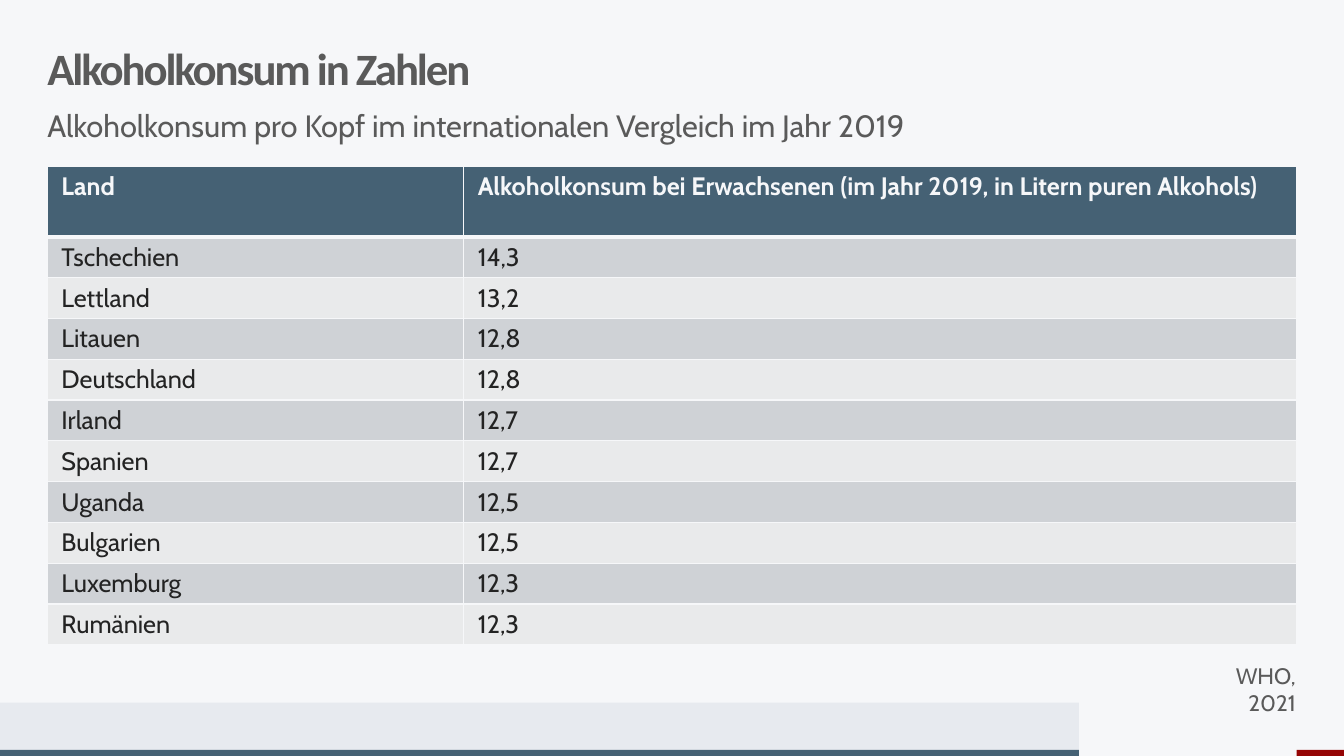
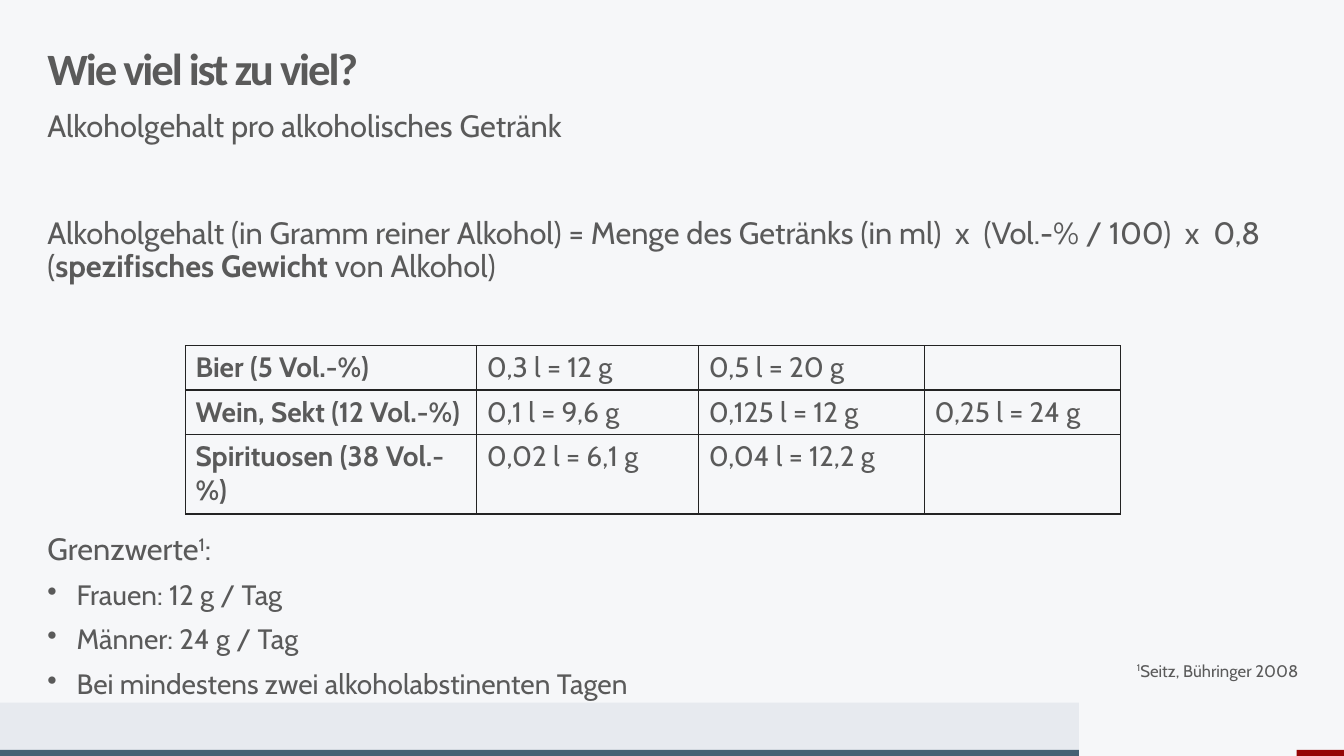
import dataclasses

import lxml.etree
import pptx
import pptx.dml.color
import pptx.enum.shapes
import pptx.enum.text
import pptx.oxml.ns
import pptx.util

Inches = pptx.util.Inches
Pt = pptx.util.Pt
ALIGN = pptx.enum.text.PP_ALIGN
ANCHOR = pptx.enum.text.MSO_ANCHOR


@dataclasses.dataclass(frozen=True)
class Theme:
    paper: str = "F6F7F9"
    band: str = "E7EAEF"
    blue: str = "456174"
    red: str = "950505"
    text: str = "5A5A5A"
    ink: str = "232323"
    row_dark: str = "CFD2D6"
    row_light: str = "E9EAEB"
    title_font: str = "Calibri"
    body_font: str = "Cabin"
    title_size: float = 32
    body_size: float = 22
    list_size: float = 20
    table_size: float = 18
    source_size: float = 16
    note_size: float = 12
    tight: float = 0.9
    space: float = 10


@dataclasses.dataclass(frozen=True)
class Box:
    left: float
    top: float
    width: float
    height: float

    def lengths(self):
        return [Inches(value) for value in dataclasses.astuple(self)]


@dataclasses.dataclass(frozen=True)
class Span:
    text: str
    bold: bool = False
    raised: bool = False


THEME = Theme()
MARGIN = 0.47
PAGE_WIDTH, PAGE_HEIGHT = 13.33, 7.5
CONTENT_WIDTH = PAGE_WIDTH - 2 * MARGIN


def rgb(colour):
    return pptx.dml.color.RGBColor.from_string(colour)


def add_span(para, span, size, colour=THEME.text, font=THEME.body_font):
    run = para.add_run()
    run.text = span.text
    run.font.name = font
    run.font.size = Pt(size)
    run.font.bold = span.bold
    run.font.color.rgb = rgb(colour)
    if span.raised:
        run.font._element.set("baseline", "30000")
    return run


def add_bullet(para, indent=0.29):
    properties = para._p.get_or_add_pPr()
    properties.set("marL", str(Inches(indent)))
    properties.set("indent", str(-Inches(indent)))
    bullet = lxml.etree.SubElement(properties, pptx.oxml.ns.qn("a:buChar"))
    bullet.set("char", "•")


def add_frame(page, box, inset=0, anchor=ANCHOR.TOP):
    frame = page.shapes.add_textbox(*box.lengths()).text_frame
    frame.word_wrap = True
    frame.vertical_anchor = anchor
    frame.margin_left = frame.margin_right = Inches(inset)
    frame.margin_top = frame.margin_bottom = Inches(inset / 2)
    return frame


def add_body_text(page, box, spans):
    frame = add_frame(page, box)
    para = frame.paragraphs[0]
    para.line_spacing = THEME.tight
    for span in spans:
        add_span(para, span, THEME.body_size)
    return frame


def add_source(page, box, spans, size, inset=0):
    para = add_frame(page, box, inset).paragraphs[0]
    para.alignment = ALIGN.RIGHT
    for span in spans:
        add_span(para, span, size)


def add_footer(page, box):
    """Draw the pale band and the two strips along the bottom of the box."""
    band_width, strip = 10.7, 0.06
    strip_top = box.top + box.height - strip
    parts = [
        (Box(box.left, box.top, band_width, box.height - strip), THEME.band),
        (Box(box.left, strip_top, band_width, strip), THEME.blue),
        (Box(box.left + box.width - MARGIN, strip_top, MARGIN, strip), THEME.red),
    ]
    for part, colour in parts:
        shape = page.shapes.add_shape(
            pptx.enum.shapes.MSO_SHAPE.RECTANGLE, *part.lengths())
        shape.shadow.inherit = False
        shape.fill.solid()
        shape.fill.fore_color.rgb = rgb(colour)
        shape.line.fill.background()


def add_heading(page, box, title, subtitle):
    frame = add_frame(page, Box(box.left, box.top, box.width, 0.47),
                      anchor=ANCHOR.MIDDLE)
    para = frame.paragraphs[0]
    para.line_spacing = THEME.tight
    run = add_span(para, Span(title, bold=True), THEME.title_size,
                   font=THEME.title_font)
    run.font._element.set("spc", "-150")
    add_body_text(page, Box(box.left, box.top + 0.63, box.width, 0.39),
                  [Span(subtitle)])


def add_page(deck, title, subtitle):
    """Add a page with the background, footer and heading that all pages share."""
    page = deck.slides.add_slide(deck.slide_layouts[6])
    page.background.fill.solid()
    page.background.fill.fore_color.rgb = rgb(THEME.paper)
    add_footer(page, Box(0, 6.97, PAGE_WIDTH, PAGE_HEIGHT - 6.97))
    add_heading(page, Box(MARGIN, 0.47, CONTENT_WIDTH, 1.02), title, subtitle)
    return page


def set_borders(cell, colour, top=1, bottom=1):
    properties = cell._tc.get_or_add_tcPr()
    widths = {"a:lnL": 1, "a:lnR": 1, "a:lnT": top, "a:lnB": bottom}
    for position, (tag, width) in enumerate(widths.items()):
        line = lxml.etree.Element(pptx.oxml.ns.qn(tag), w=str(Pt(width)))
        fill = lxml.etree.SubElement(line, pptx.oxml.ns.qn("a:solidFill"))
        lxml.etree.SubElement(fill, pptx.oxml.ns.qn("a:srgbClr"), val=colour)
        properties.insert(position, line)


def add_plain_table(page, box, column_widths, row_heights):
    """Add a table without banding, sized by its columns and rows."""
    table = page.shapes.add_table(
        len(row_heights), len(column_widths), *box.lengths()).table
    table.first_row = table.horz_banding = False
    for column, width in zip(table.columns, column_widths):
        column.width = Inches(width)
    for row, height in zip(table.rows, row_heights):
        row.height = Inches(height)
    return table


def add_country_table(page, box, header, countries):
    header_height = 0.7
    row_height = (box.height - header_height) / len(countries)
    table = add_plain_table(
        page, box, [box.width / 3, box.width * 2 / 3],
        [header_height] + [row_height] * len(countries))
    for row, values in enumerate([header, *countries]):
        is_header = row == 0
        if is_header:
            fill, colour = THEME.blue, THEME.paper
        else:
            fill = THEME.row_dark if row % 2 else THEME.row_light
            colour = THEME.ink
        for column, value in enumerate(values):
            cell = table.cell(row, column)
            cell.margin_left = cell.margin_right = Inches(0.14)
            cell.fill.solid()
            cell.fill.fore_color.rgb = rgb(fill)
            set_borders(cell, THEME.paper, top=3 if row == 1 else 1,
                        bottom=3 if is_header else 1)
            add_span(cell.text_frame.paragraphs[0], Span(value, is_header),
                     THEME.table_size, colour)


def add_drink_table(page, box, drinks):
    table = add_plain_table(page, box, [2.89, 2.2, 2.24, 1.94],
                            [0.44, 0.44, box.height - 0.88])
    for row, values in enumerate(drinks):
        for column, value in enumerate(values):
            cell = table.cell(row, column)
            cell.fill.background()
            set_borders(cell, THEME.ink)
            if value:
                add_span(cell.text_frame.paragraphs[0],
                         Span(value, bold=column == 0), THEME.list_size)


def add_limits(page, box, heading, limits):
    frame = add_body_text(page, box, heading)
    for limit in limits:
        para = frame.add_paragraph()
        add_bullet(para)
        para.line_spacing = THEME.tight
        para.space_before = Pt(THEME.space)
        add_span(para, Span(limit), THEME.list_size)


def build_consumption_page(deck):
    page = add_page(
        deck, "Alkoholkonsum in Zahlen",
        "Alkoholkonsum pro Kopf im internationalen Vergleich im Jahr 2019")
    header = ("Land", "Alkoholkonsum bei Erwachsenen "
                      "(im Jahr 2019, in Litern puren Alkohols)")
    countries = [
        ("Tschechien", "14,3"),
        ("Lettland", "13,2"),
        ("Litauen", "12,8"),
        ("Deutschland", "12,8"),
        ("Irland", "12,7"),
        ("Spanien", "12,7"),
        ("Uganda", "12,5"),
        ("Bulgarien", "12,5"),
        ("Luxemburg", "12,3"),
        ("Rumänien", "12,3"),
    ]
    add_country_table(page, Box(MARGIN, 1.65, CONTENT_WIDTH, 4.75),
                      header, countries)
    add_source(page, Box(11.95, 6.52, 1, 0.64), [Span("WHO, 2021")],
               THEME.source_size, inset=0.1)


def build_limits_page(deck):
    page = add_page(deck, "Wie viel ist zu viel?",
                    "Alkoholgehalt pro alkoholisches Getränk")
    add_body_text(page, Box(MARGIN, 2.16, CONTENT_WIDTH, 0.7), [
        Span("Alkoholgehalt (in Gramm reiner Alkohol) = Menge des Getränks "
             "(in ml)  x  (Vol.-% / 100)  x  0,8 ("),
        Span("spezifisches Gewicht", bold=True),
        Span(" von Alkohol)"),
    ])
    add_limits(
        page, Box(MARGIN, 5.3, CONTENT_WIDTH, 1.67),
        [Span("Grenzwerte"), Span("1", raised=True), Span(":")],
        ["Frauen: 12 g / Tag", "Männer: 24 g / Tag",
         "Bei mindestens zwei alkoholabstinenten Tagen"])
    add_source(page, Box(3.1, 6.55, 9.78, 0.38),
               [Span("1", raised=True), Span("Seitz, Bühringer 2008")],
               THEME.note_size)
    add_drink_table(page, Box(1.84, 3.43, 9.27, 1.67), [
        ("Bier (5 Vol.-%)", "0,3 l = 12 g", "0,5 l = 20 g", ""),
        ("Wein, Sekt (12 Vol.-%)", "0,1 l = 9,6 g", "0,125 l = 12 g",
         "0,25 l = 24 g"),
        ("Spirituosen (38 Vol.-%)", "0,02 l = 6,1 g", "0,04 l = 12,2 g", ""),
    ])


def main():
    deck = pptx.Presentation()
    deck.slide_width = Inches(PAGE_WIDTH)
    deck.slide_height = Inches(PAGE_HEIGHT)
    build_consumption_page(deck)
    build_limits_page(deck)
    deck.save("out.pptx")


if __name__ == "__main__":
    main()
